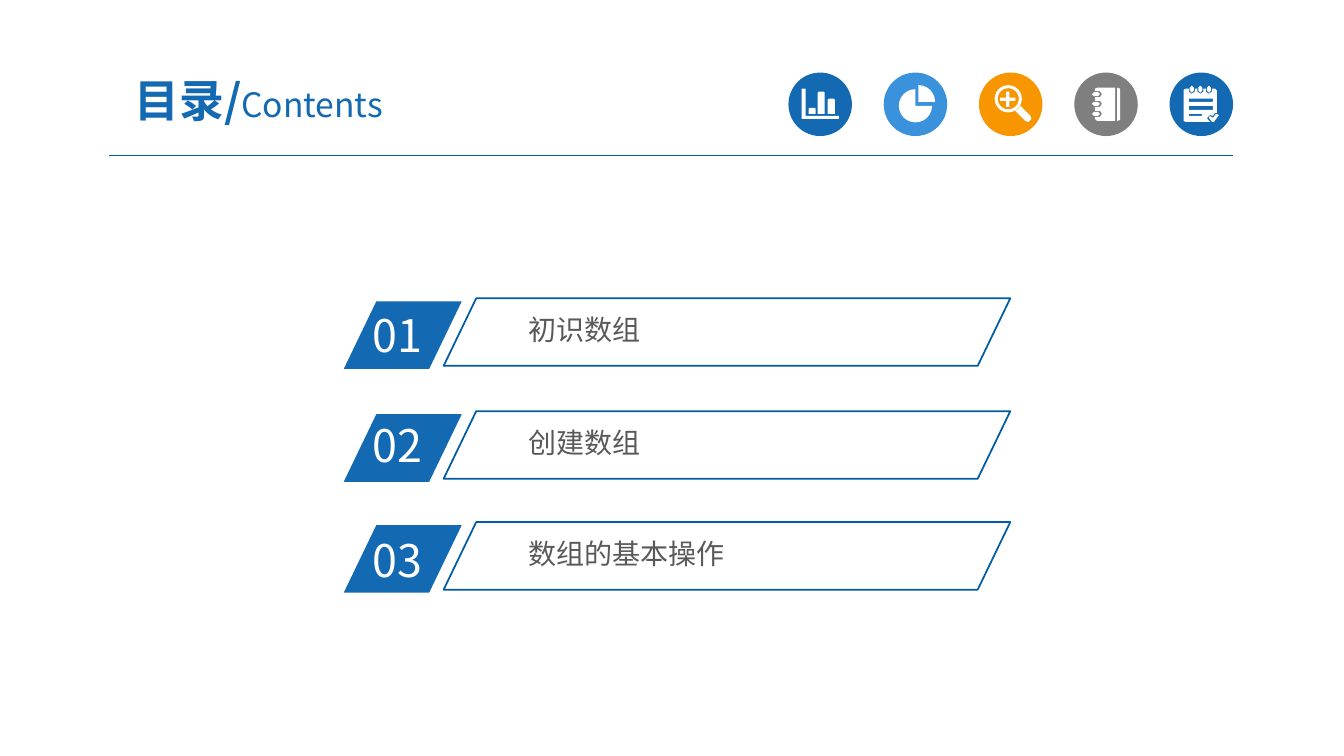
import math

import pptx
import pptx.util
import pptx.dml.color
import pptx.enum.shapes
import pptx.enum.text
import pptx.oxml.ns
from lxml import etree

Inches = pptx.util.Inches
RGBColor = pptx.dml.color.RGBColor
SHAPE = pptx.enum.shapes.MSO_SHAPE
ALIGN = pptx.enum.text.PP_ALIGN
ANCHOR = pptx.enum.text.MSO_ANCHOR
qn = pptx.oxml.ns.qn

FONT = "Noto Sans CJK SC"
BLUE = RGBColor(0x13, 0x69, 0xB2)
SKY = RGBColor(0x39, 0x92, 0xDB)
ORANGE = RGBColor(0xF7, 0x96, 0x00)
GRAY = RGBColor(0x7F, 0x7F, 0x7F)
FRAME = RGBColor(0x00, 0x5D, 0xA2)
RULE = RGBColor(0x00, 0x5B, 0x9E)
INK = RGBColor(0x59, 0x59, 0x59)
WHITE = RGBColor(0xFF, 0xFF, 0xFF)

prs = pptx.Presentation()
prs.slide_width, prs.slide_height = Inches(13.33), Inches(7.5)
s = prs.slides.add_slide(prs.slide_layouts[6])


def paint(sp, fill=None, line=None):
    sp.shadow.inherit = False
    if fill is None:
        sp.fill.background()
    else:
        sp.fill.solid()
        sp.fill.fore_color.rgb = fill
    if line is None:
        sp.line.fill.background()
    else:
        sp.line.color.rgb = line
        sp.line.width = pptx.util.Pt(1.25)


def arc(x, y, radius, start=0, end=360):
    angles = [math.radians(a) for a in range(start, end + 1, 15)]
    return [(x + radius * math.cos(a), y + radius * math.sin(a)) for a in angles]


# Header rule
rule = s.shapes.add_connector(pptx.enum.shapes.MSO_CONNECTOR.STRAIGHT,
                              Inches(1.08), Inches(1.54), Inches(12.23), Inches(1.54))
rule.line.color.rgb = RULE
rule.line.width = pptx.util.Pt(0.75)
etree.SubElement(rule._element.spPr, qn("a:effectLst"))

# Icon outlines: bars, pie and magnifier
bars = [[(7.95, 0.88), (7.99, 0.88), (7.99, 1.15), (8.32, 1.15), (8.32, 1.18), (7.95, 1.18)]]
for x, top in ((8.02, 1.07), (8.11, 0.91), (8.21, 0.98)):
    bars.append([(x, 1.13), (x, top + 0.01), (x + 0.01, top), (x + 0.06, top),
                 (x + 0.07, top + 0.01), (x + 0.07, 1.13)])
pie = [[(9.08, 1.05)] + arc(9.08, 1.05, 0.165, 0, 270),
       [(9.11, 1.01)] + arc(9.11, 1.01, 0.165, 270, 360)]
magnifier = [
    arc(10, 0.98, 0.135), arc(10, 0.98, 0.105),
    [(9.98, 0.91), (10.01, 0.91), (10.01, 0.97), (10.07, 0.97), (10.07, 1), (10.01, 1),
     (10.01, 1.06), (9.98, 1.06), (9.98, 1), (9.92, 1), (9.92, 0.97), (9.98, 0.97)],
    [(10.12, 1.05), (10.22, 1.15), (10.23, 1.18), (10.2, 1.21), (10.17, 1.2),
     (10.07, 1.1), (10.1, 1.08)]]

# Notebook: cover notched for its rings, and the edge
cover = [(11.06, 1.2), (11.06, 0.87), (10.88, 0.87), (10.86, 0.88)]
notebook = [cover, [(11.08, 0.87), (11.11, 0.88), (11.11, 1.19), (11.08, 1.2)]]
for y in (0.935, 1.03, 1.13):
    cover += [(10.86, y - 0.03), (10.91, y - 0.03), (10.93, y), (10.91, y + 0.03), (10.86, y + 0.03)]
    notebook.append([(10.83, y), (10.85, y - 0.02), (10.89, y - 0.02),
                     (10.91, y), (10.89, y + 0.02), (10.85, y + 0.02)])
cover += [(10.86, 1.18), (10.88, 1.2)]

# Notepad: sheet notched for its rings, written lines and a tick
sheet = [(11.74, 1.2), (11.74, 0.89), (11.76, 0.88)]
tick = [(11.99, 1.17), (12, 1.15), (12.03, 1.17), (12.06, 1.13), (12.09, 1.14), (12.04, 1.21), (12.02, 1.21)]
notepad = [sheet, tick]
for x in (11.82, 11.905, 11.99):
    sheet += [(x - 0.03, 0.88), (x - 0.03, 0.91), (x, 0.93), (x + 0.03, 0.91), (x + 0.03, 0.88)]
    notepad.append([(x, 0.85), (x + 0.02, 0.87), (x + 0.02, 0.9),
                    (x, 0.92), (x - 0.02, 0.9), (x - 0.02, 0.87)])
sheet += [(12.05, 0.88), (12.07, 0.9), (12.07, 1.12), (12.05, 1.12), (12.03, 1.15),
          (12, 1.14), (11.97, 1.17), (12, 1.21), (11.76, 1.21)]
for y, right, height in ((0.98, 12.03, 0.03), (1.05, 12.03, 0.04), (1.13, 11.92, 0.02)):
    notepad.append([(11.79, y), (right, y), (right, y + height), (11.79, y + height)])

# Icons: a white outline on each disc
icons = ((BLUE, bars), (SKY, pie), (ORANGE, magnifier), (GRAY, notebook), (BLUE, notepad))
for i, (color, contours) in enumerate(icons):
    left = 7.82 + 0.945 * i
    paint(s.shapes.add_shape(SHAPE.OVAL, *map(Inches, (left, 0.72, 0.63, 0.63))), color)
    builder = None
    for contour in contours:
        points = [(Inches(x), Inches(y)) for x, y in contour]
        if builder is None:
            builder = s.shapes.build_freeform(*points[0])
        else:
            builder.move_to(*points[0])
        builder.add_line_segments(points[1:], close=True)
    paint(builder.convert_to_shape(), WHITE)

# Contents entries
texts = [((0.92, 0.63, 3.29, 0.72), (0.13, 0.07), ALIGN.CENTER, ANCHOR.MIDDLE,
          (("目录/", 32, BLUE, True), ("Contents", 24, BLUE, False)))]
entries = (("01", 3, 2.96, "初识数组"), ("02", 4.09, 4.08, "创建数组"),
           ("03", 5.24, 5.18, "数组的基本操作"))
for number, number_top, top, topic in entries:
    for at, fill, line in (((3.41, top + 0.03, 1.17, 0.67), BLUE, None),
                           ((4.4, top, 5.62, 0.67), None, FRAME)):
        sp = s.shapes.add_shape(SHAPE.PARALLELOGRAM, *map(Inches, at))
        sp.adjustments[0] = 0.482
        paint(sp, fill, line)
    texts.append(((3.6, number_top, 1.12, 0.64), (0.1, 0.05), ALIGN.LEFT, ANCHOR.TOP,
                  ((number, 32, WHITE, False),)))
    texts.append(((5.17, top + 0.1, 4.12, 0.42), (0.07, 0.04), ALIGN.LEFT, ANCHOR.TOP,
                  ((topic, 20, INK, False),)))

# Title, numbers and topics
for at, inset, align, anchor, runs in texts:
    tf = s.shapes.add_textbox(*map(Inches, at)).text_frame
    tf.word_wrap = True
    tf.vertical_anchor = anchor
    tf.margin_left = tf.margin_right = Inches(inset[0])
    tf.margin_top = tf.margin_bottom = Inches(inset[1])
    p = tf.paragraphs[0]
    p.alignment = align
    for text, size, color, bold in runs:
        r = p.add_run()
        r.text = text
        r.font.name = FONT
        r.font.size = pptx.util.Pt(size)
        r.font.color.rgb = color
        r.font.bold = bold
        etree.SubElement(r.font._element, qn("a:ea")).set("typeface", FONT)

prs.save("out.pptx")
